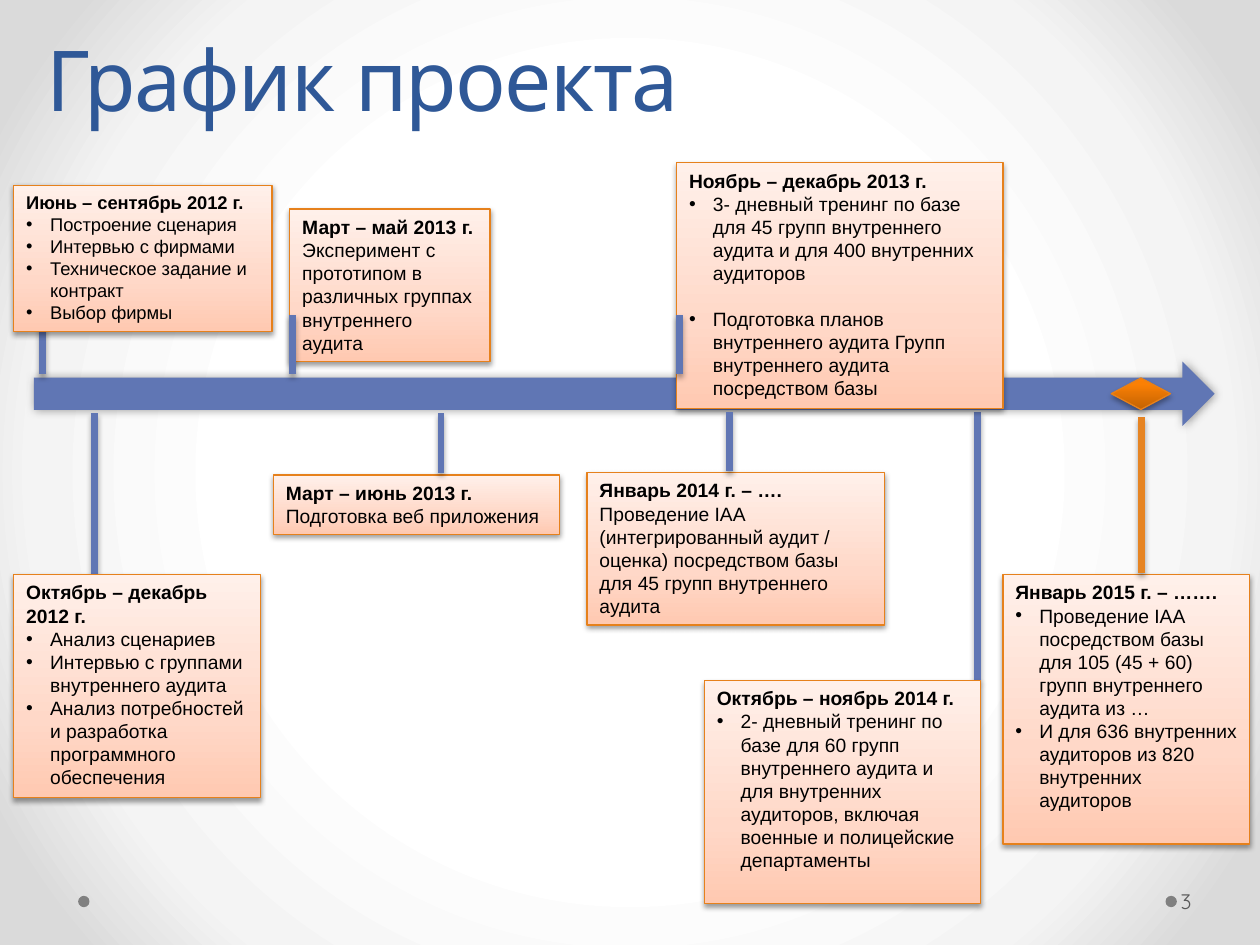
from typing import NamedTuple

from lxml import etree
from pptx import Presentation
from pptx import util as u
from pptx.dml.color import RGBColor
from pptx.enum import shapes, text
from pptx.oxml import ns

BLUE, ORANGE, EDGE, BLACK = "6076B4", "E68422", "E6811C", "000000"
PEACH = ((0, "FFC9B1"), (35, "FFD8C8"), (100, "FFF0EA"))
AMBER = ((0, "C26203"), (80, "FB8004"), (100, "FF8002"))
BACKDROP = ((50, "FFFFFF"), (76, "F4F4F4"), (92, "DADADA"))


class Shadow(NamedTuple):
    alpha: int
    blur: float
    dist: float
    angle: int


class Stage(NamedTuple):
    at: tuple[float, float, float, float]
    heading: str
    items: tuple[str, ...]
    bullets: bool = True
    size: float = 11
    gap: float = 0          # points between items
    inline: bool = False    # heading and text share a paragraph


class Stem(NamedTuple):
    x: float
    top: float
    bottom: float
    color: str = BLUE


ARROW_SHADOW = Shadow(40, 5, 0, 0)
BOX_SHADOW = Shadow(38, 3.1, 1.6, 90)
LINE_SHADOW = Shadow(35, 3.1, 1.8, 90)

STAGES = (
    Stage((0.11, 1.47, 2.05, 1.16), "Июнь – сентябрь 2012 г.",
          ("Построение сценария", "Интервью с фирмами",
           "Техническое задание и контракт", "Выбор фирмы"), size=10.5),
    Stage((0.11, 4.56, 1.96, 1.77), "Октябрь – декабрь 2012 г.",
          ("Анализ сценариев", "Интервью с группами внутреннего аудита",
           "Анализ потребностей и разработка программного обеспечения")),
    Stage((2.3, 1.66, 1.59, 1.21), "Март – май 2013 г. ",
          ("Эксперимент с прототипом в различных группах внутреннего аудита",),
          bullets=False, inline=True),
    Stage((2.17, 3.77, 2.27, 0.47), "Март – июнь 2013 г.",
          ("Подготовка веб приложения",), bullets=False),
    Stage((5.37, 1.29, 2.59, 1.95), "Ноябрь – декабрь 2013 г.",
          ("3- дневный тренинг по базе для 45 групп внутреннего аудита "
           "и для 400 внутренних аудиторов",
           "Подготовка планов внутреннего аудита Групп внутреннего аудита "
           "посредством базы"), gap=13),
    Stage((4.66, 3.75, 2.36, 1.21), "Январь 2014 г. – ….",
          ("Проведение IAA (интегрированный аудит / оценка) посредством базы "
           "для 45 групп внутреннего аудита",), bullets=False),
    Stage((7.96, 4.56, 1.96, 2.14), "Январь 2015 г. – …….",
          ("Проведение IAA посредством базы для 105 (45 + 60) групп "
           "внутреннего аудита из …",
           "И для 636 внутренних аудиторов из 820 внутренних аудиторов")),
    Stage((5.59, 5.4, 2.19, 1.77), "Октябрь – ноябрь 2014 г.",
          ("2- дневный тренинг по базе для 60 групп внутреннего аудита и для "
           "внутренних аудиторов, включая военные и полицейские департаменты",)),
)
STEMS_BEHIND = (Stem(0.34, 2.5, 2.97), Stem(0.75, 3.28, 4.56),
                Stem(7.76, 3.27, 5.4))
STEMS_IN_FRONT = (Stem(2.32, 2.5, 2.97), Stem(3.5, 3.28, 3.75),
                  Stem(5.39, 2.5, 2.97), Stem(5.79, 3.27, 3.74),
                  Stem(9.06, 3.31, 4.55, ORANGE))


def rgb(color: str) -> RGBColor:
    return RGBColor.from_string(color)


def add_xml(parent, tag: str, **attrs):
    return etree.SubElement(parent, ns.qn(tag),
                            {k: str(v) for k, v in attrs.items()})


def set_gradient(fill, stops, radial: bool = False) -> None:
    fill.gradient()
    grad = fill._fill._gradFill
    grad.clear()
    stop_list = add_xml(grad, "a:gsLst")
    for pos, color in stops:
        add_xml(add_xml(stop_list, "a:gs", pos=pos * 1000), "a:srgbClr", val=color)
    if radial:
        add_xml(add_xml(grad, "a:path", path="circle"), "a:fillToRect",
                l=50000, t=50000, r=50000, b=50000)
    else:
        add_xml(grad, "a:lin", ang=270 * 60000, scaled=0)


def set_shadow(sp, shadow: Shadow | None) -> None:
    props = sp._element.spPr
    effects = props.find(ns.qn("a:effectLst"))
    if effects is None:
        effects = add_xml(props, "a:effectLst")
    if shadow:
        outer = add_xml(effects, "a:outerShdw", blurRad=u.Pt(shadow.blur),
                        dist=u.Pt(shadow.dist), dir=shadow.angle * 60000,
                        rotWithShape=0)
        add_xml(add_xml(outer, "a:srgbClr", val=BLACK), "a:alpha",
                val=shadow.alpha * 1000)


def add_shape(s, kind, at, fill, line: str | None = None,
              shadow: Shadow | None = None):
    sp = s.shapes.add_shape(kind, *map(u.Inches, at))
    sp.shadow.inherit = False
    if isinstance(fill, str):
        sp.fill.solid()
        sp.fill.fore_color.rgb = rgb(fill)
    else:
        set_gradient(sp.fill, fill)
    if line:
        sp.line.color.rgb = rgb(line)
        sp.line.width = u.Pt(0.75)
    else:
        sp.line.fill.background()
    set_shadow(sp, shadow)
    return sp


def add_run(p, content: str, *, size: float, font: str = "Arial",
            color: str = BLACK, bold: bool = False):
    r = p.add_run()
    r.text = content
    r.font.size, r.font.name, r.font.bold = u.Pt(size), font, bold
    r.font.color.rgb = rgb(color)
    return r


def add_label(s, at, content: str, anchor, left: float = 0.1, **fmt):
    tf = s.shapes.add_textbox(*map(u.Inches, at)).text_frame
    tf.word_wrap, tf.vertical_anchor = True, anchor
    tf.margin_left = u.Inches(left)
    return add_run(tf.paragraphs[0], content, **fmt)


def add_stem(s, stem: Stem) -> None:
    line = s.shapes.add_connector(
        shapes.MSO_CONNECTOR.STRAIGHT,
        *map(u.Inches, (stem.x, stem.top, stem.x, stem.bottom)))
    line.line.color.rgb = rgb(stem.color)
    line.line.width = u.Pt(4)
    set_shadow(line, LINE_SHADOW)


def add_stage(s, stage: Stage) -> None:
    sp = add_shape(s, shapes.MSO_SHAPE.RECTANGLE, stage.at, PEACH, EDGE, BOX_SHADOW)
    tf = sp.text_frame
    tf.word_wrap, tf.vertical_anchor = True, text.MSO_ANCHOR.TOP
    p = tf.paragraphs[0]
    p.alignment = text.PP_ALIGN.LEFT
    add_run(p, stage.heading, size=stage.size, bold=True)
    for i, item in enumerate(stage.items):
        if not stage.inline:
            p = tf.add_paragraph()
            p.alignment = text.PP_ALIGN.LEFT
        if i and stage.gap:
            p.space_before = u.Pt(stage.gap)
        if stage.bullets:
            props = p._p.get_or_add_pPr()
            indent = u.Inches(0.19)
            props.set("marL", str(indent))
            props.set("indent", str(-indent))
            add_xml(props, "a:buFont", typeface="Arial")
            add_xml(props, "a:buChar", char="•")
        add_run(p, item, size=stage.size)


def main() -> None:
    prs = Presentation()
    prs.slide_width, prs.slide_height = u.Inches(10), u.Inches(7.5)
    s = prs.slides.add_slide(prs.slide_layouts[6])
    set_gradient(s.background.fill, BACKDROP, radial=True)

    # Footer dots and page number
    for x in (9.25, 0.62):
        add_shape(s, shapes.MSO_SHAPE.OVAL, (x, 7.11, 0.09, 0.09), "808080")
    add_label(s, (9.34, 6.95, 0.61, 0.4), "3", text.MSO_ANCHOR.MIDDLE, left=0.03,
              size=12, font="Quicksand", color="595959")

    # Title
    title = add_label(s, (0.27, 0.14, 8.33, 0.93), "График проекта",
                      text.MSO_ANCHOR.BOTTOM, size=48, font="Quicksand",
                      color="2F5897")
    title._r.get_or_add_rPr().set("spc", "-100")

    # Timeline with its stages
    add_shape(s, shapes.MSO_SHAPE.RIGHT_ARROW, (0.27, 2.87, 9.37, 0.51), BLUE,
              shadow=ARROW_SHADOW)
    for stem in STEMS_BEHIND:
        add_stem(s, stem)
    for stage in STAGES:
        add_stage(s, stage)
    for stem in STEMS_IN_FRONT:
        add_stem(s, stem)

    # Final milestone
    add_shape(s, shapes.MSO_SHAPE.DIAMOND, (8.82, 3, 0.47, 0.25), AMBER, EDGE,
              LINE_SHADOW)
    prs.save("out.pptx")


if __name__ == "__main__":
    main()
